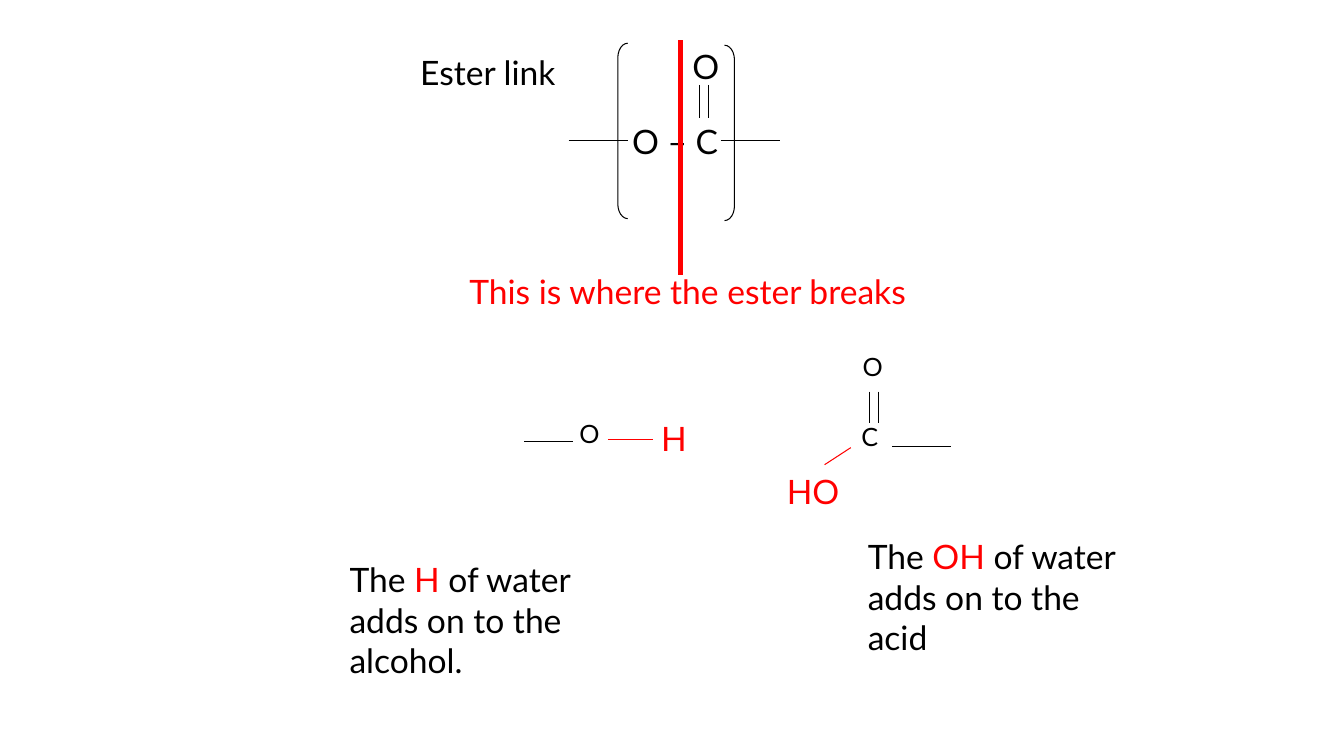
from pptx import Presentation
from pptx.dml.color import RGBColor
from pptx.enum import shapes, text
from pptx.oxml import parse_xml
from pptx.oxml.ns import nsdecls
from pptx.util import Cm, Pt

COLORS = {"black": "000000", "red": "FF0000"}
FONT = "Lato"
LINE_WIDTH = 0.75
DOUBLE_BOND_GAP = 0.23

# Runs as (words, colour), then size in points, left, top, width in cm, number of lines
LABELS = [
    ([("O – C", "black")], 24, 15.68, 2.92, 4.8, 1),
    ([("O", "black")], 24, 17.2, 1.02, 1.2, 1),
    ([("Ester link", "black")], 24, 10.34, 1.19, 4.65, 1),
    ([("This is where the ester breaks", "red")], 24, 11.58, 6.71, 12.37, 1),
    ([("O", "black")], 18, 14.35, 10.41, 1.2, 1),
    ([("H", "red")], 24, 16.41, 10.41, 2.26, 1),
    ([("O", "black")], 18, 21.49, 8.74, 1.2, 1),
    ([("C", "black")], 18, 21.46, 10.49, 1.2, 1),
    ([("HO", "red")], 24, 19.58, 11.73, 1.96, 1),
    ([("The ", "black"), ("H", "red"), (" of water adds on to the alcohol.", "black")],
     24, 8.56, 13.97, 7.19, 3),
    ([("The ", "black"), ("OH", "red"), (" of water adds on to the acid", "black")],
     24, 21.62, 13.39, 7.19, 3),
]

# Start x, start y, end x, end y in cm, colour, width in points
BONDS = [
    (14.33, 3.53, 15.82, 3.53, "black", LINE_WIDTH),
    (18.16, 3.53, 19.65, 3.53, "black", LINE_WIDTH),
    (13.21, 11.13, 14.43, 11.13, "black", LINE_WIDTH),
    (22.48, 11.25, 23.96, 11.25, "black", LINE_WIDTH),
    (15.32, 11.07, 16.46, 11.07, "red", LINE_WIDTH),
    (20.78, 11.71, 21.44, 11.28, "red", LINE_WIDTH),
]
DOUBLE_BONDS = [(17.63, 2.14, 2.97), (21.92, 9.87, 10.67)]  # x, top, bottom
BREAK_LINE = (17.15, 1.02, 17.15, 6.93, "red", 3)
BRACKETS = [
    (shapes.MSO_SHAPE.LEFT_BRACKET, 15.57, 1.09),
    (shapes.MSO_SHAPE.RIGHT_BRACKET, 18.26, 1.14),
]
BRACKET_SIZE = (0.25, 4.42)


def rgb(name):
    return RGBColor.from_string(COLORS[name])


def add_label(slide, runs, size, left, top, width, lines):
    height = lines * size * 1.2 / 72 * 2.54 + 0.25
    box = slide.shapes.add_textbox(Cm(left), Cm(top), Cm(width), Cm(height))
    frame = box.text_frame
    frame.word_wrap = True
    frame.auto_size = text.MSO_AUTO_SIZE.SHAPE_TO_FIT_TEXT
    for words, color in runs:
        run = frame.paragraphs[0].add_run()
        run.text = words
        run.font.name = FONT
        run.font.size = Pt(size)
        run.font.color.rgb = rgb(color)


def add_line(slide, start_x, start_y, end_x, end_y, color, width):
    line = slide.shapes.add_connector(
        shapes.MSO_CONNECTOR.STRAIGHT, Cm(start_x), Cm(start_y), Cm(end_x), Cm(end_y))
    line.line.color.rgb = rgb(color)
    line.line.width = Pt(width)
    line._element.spPr.append(parse_xml(f"<a:effectLst {nsdecls('a')}/>"))


def add_bracket(slide, kind, left, top):
    bracket = slide.shapes.add_shape(kind, Cm(left), Cm(top), *map(Cm, BRACKET_SIZE))
    bracket.adjustments[0] = 1.49
    bracket.shadow.inherit = False
    bracket.fill.background()
    bracket.line.color.rgb = rgb("black")
    bracket.line.width = Pt(LINE_WIDTH)


def main():
    presentation = Presentation()
    presentation.slide_width = Cm(33.87)
    presentation.slide_height = Cm(19.05)
    slide = presentation.slides.add_slide(presentation.slide_layouts[6])

    for label in LABELS:
        add_label(slide, *label)
    for bracket in BRACKETS:
        add_bracket(slide, *bracket)
    for bond in BONDS:
        add_line(slide, *bond)
    for left, top, bottom in DOUBLE_BONDS:
        for x in (left, left + DOUBLE_BOND_GAP):
            add_line(slide, x, top, x, bottom, "black", LINE_WIDTH)
    add_line(slide, *BREAK_LINE)

    presentation.save("out.pptx")


if __name__ == "__main__":
    main()
